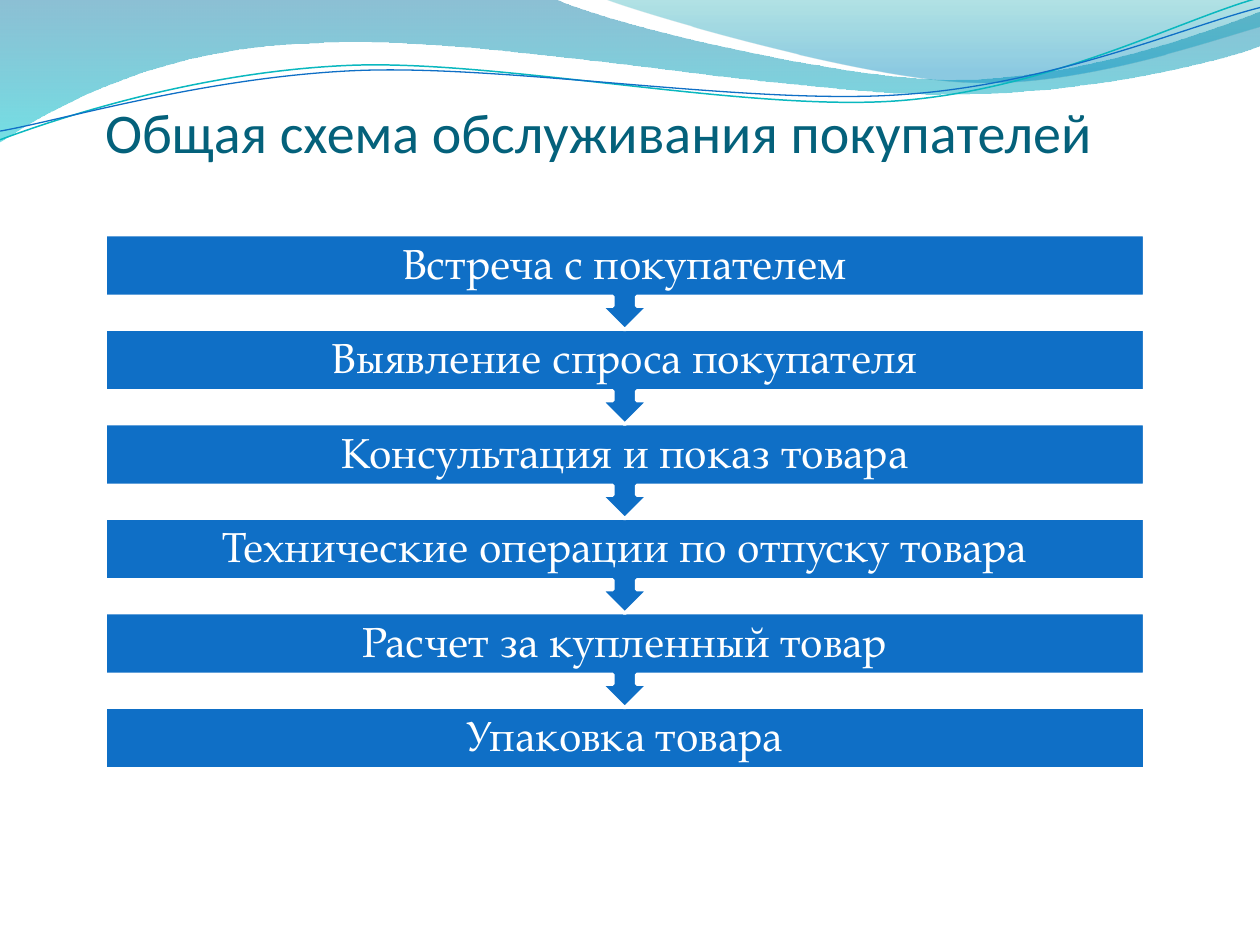
from lxml import etree
from pptx import Presentation, util as u
from pptx.dml.color import RGBColor
from pptx.enum import shapes, text
from pptx.oxml.ns import qn

TITLE = "Общая схема обслуживания покупателей"
STEPS = [
    "Встреча с покупателем",
    "Выявление спроса покупателя",
    "Консультация и показ товара",
    "Технические операции по отпуску товара",
    "Расчет за купленный товар",
    "Упаковка товара",
]
THEME = {
    "title_font": "Calibri", "title_size": 32, "title_color": "04617B",
    "step_font": "TeX Gyre Pagella", "step_size": 24, "step_color": "FFFFFF",
    "step_fill": "0F6FC6", "step_line": "FFFFFF", "step_line_width": 2,
}

# Each segment is one point for a straight line, three for a curve.
WAVES = [
    {"start": (0, 0),
     "segments": [
         [(316.8, -0.7)],
         [(342.7, 12.2), (478.1, 45.4), (545.8, 45.4)],
         [(614.2, 45.4), (689.8, 18.7), (720, 6.5)],
         [(720.7, 25.9)],
         [(707.8, 31.7), (626.4, 54.7), (537.1, 54)],
         [(447.8, 54), (275, 20.2), (185, 24.5)],
         [(92.9, 25.9), (33.1, 59.8), (-0.7, 81.4)]],
     "stops": [(0, "0074A1", 45), (1, "00C6CF", 55)]},
    {"start": (344.9, -0.7),
     "segments": [
         [(366.5, 7.9), (491, 44.6), (553.7, 46.8)],
         [(616.3, 49.7), (691.9, 23), (720, 15.1)],
         [(720, 0)]],
     "stops": [(0, "00A1A9", 30), (0.8, "008BBF", 45)]},
    {"start": (0, 79.9),
     "segments": [
         [(34.6, 67), (113.8, 41), (199.4, 37.4)],
         [(284.4, 33.8), (427, 64.1), (513.4, 57.6)],
         [(599.8, 51.1), (675.4, 10.8), (720, -1.4)]],
     "line": ("0AB8BF", 0.85)},
    {"start": (0, 74.9),
     "segments": [
         [(33.8, 69.1), (118.1, 43.9), (203.8, 40.3)],
         [(290.2, 36.7), (429.8, 60.5), (516.2, 54)],
         [(601.9, 48.2), (677.5, 15.1), (720, 4.3)]],
     "line": ("0F6FC6", 0.75)},
]

LEFT, WIDTH = 60, 594
FIRST_TOP, PITCH = 134, 54
BOX_HEIGHT, CALLOUT_HEIGHT = 35.3, 54.5


def rgb(value):
    return RGBColor.from_string(value)


def curve_outline(shape, segments):
    lines = list(shape.element.iter(qn("a:lnTo")))
    for segment in segments:
        group, lines = lines[:len(segment)], lines[len(segment):]
        if len(segment) == 3:
            curve = etree.Element(qn("a:cubicBezTo"))
            group[0].addprevious(curve)
            for line in group:
                curve.append(line[0])
                line.getparent().remove(line)


def add_wave(page, wave):
    closed = "stops" in wave
    points = [(u.Pt(x), u.Pt(y)) for segment in wave["segments"] for x, y in segment]
    builder = page.shapes.build_freeform(*map(u.Pt, wave["start"]))
    builder.add_line_segments(points, close=closed)
    shape = builder.convert_to_shape()
    curve_outline(shape, wave["segments"])
    shape.shadow.inherit = False
    if closed:
        shape.line.fill.background()
        shape.fill.gradient()
        shape.fill.gradient_angle = 270
        for stop, (position, color, _) in zip(shape.fill.gradient_stops, wave["stops"]):
            stop.position = position
            stop.color.rgb = rgb(color)
        for node, (_, _, opacity) in zip(shape.element.iter(qn("a:srgbClr")), wave["stops"]):
            etree.SubElement(node, qn("a:alpha"), val=str(opacity * 1000))
    else:
        color, width = wave["line"]
        shape.fill.background()
        shape.line.color.rgb = rgb(color)
        shape.line.width = u.Pt(width)


def style_text(para, role):
    for span in para.runs:
        span.font.name = THEME[role + "_font"]
        span.font.size = u.Pt(THEME[role + "_size"])
        span.font.color.rgb = rgb(THEME[role + "_color"])


def set_insets(frame, left, top, right, bottom):
    frame.margin_left, frame.margin_top = u.Pt(left), u.Pt(top)
    frame.margin_right, frame.margin_bottom = u.Pt(right), u.Pt(bottom)


def place_title(page):
    title = page.shapes.title
    title.left, title.top, title.width, title.height = map(u.Pt, (60, 31.7, 606, 62.6))
    frame = title.text_frame
    frame.text = TITLE
    frame.vertical_anchor = text.MSO_ANCHOR.BOTTOM
    set_insets(frame, 0, 3.6, 0, 0)
    frame.paragraphs[0].alignment = text.PP_ALIGN.LEFT
    style_text(frame.paragraphs[0], "title")
    page.shapes.element.append(title.element)


def add_step(page, index, label):
    last = index == len(STEPS) - 1
    kind = shapes.MSO_SHAPE.RECTANGLE if last else shapes.MSO_SHAPE.UP_ARROW_CALLOUT
    height = BOX_HEIGHT if last else CALLOUT_HEIGHT
    left, top, width = u.Pt(LEFT), u.Pt(FIRST_TOP + index * PITCH), u.Pt(WIDTH)
    shape = page.shapes.add_shape(kind, left, top, width, u.Pt(height))
    shape.rotation = 0 if last else 180
    shape.shadow.inherit = False
    shape.fill.solid()
    shape.fill.fore_color.rgb = rgb(THEME["step_fill"])
    shape.line.color.rgb = rgb(THEME["step_line"])
    shape.line.width = u.Pt(THEME["step_line_width"])

    box = page.shapes.add_textbox(left, top, width, u.Pt(BOX_HEIGHT))
    frame = box.text_frame
    frame.word_wrap = True
    frame.vertical_anchor = text.MSO_ANCHOR.MIDDLE
    set_insets(frame, 13.4, 13.4, 13.4, 13.4)
    para = frame.paragraphs[0]
    para.text = label
    para.alignment = text.PP_ALIGN.CENTER
    para.line_spacing = 0.9
    style_text(para, "step")


def main():
    deck = Presentation()
    deck.slide_width, deck.slide_height = u.Pt(720), u.Pt(540)
    page = deck.slides.add_slide(deck.slide_layouts[5])
    for wave in WAVES:
        add_wave(page, wave)
    place_title(page)
    for index, label in reversed(list(enumerate(STEPS))):
        add_step(page, index, label)
    deck.save("out.pptx")


if __name__ == "__main__":
    main()
